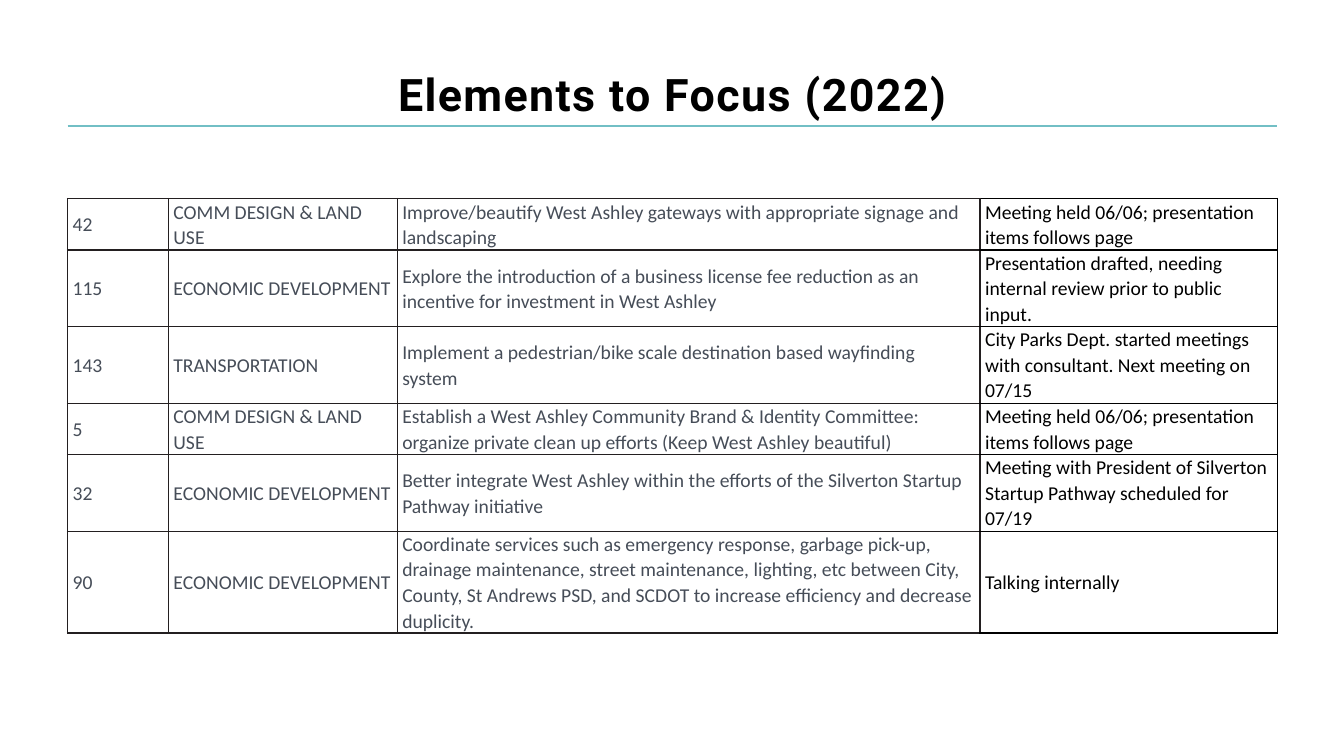
"""Build the slide that lists the elements to focus on in 2022."""
from typing import NamedTuple

from lxml.etree import SubElement
from pptx import Presentation
from pptx.dml.color import RGBColor
from pptx.enum.shapes import MSO_CONNECTOR
from pptx.enum.text import MSO_ANCHOR, PP_ALIGN
from pptx.oxml import parse_xml
from pptx.oxml.ns import nsdecls, qn
from pptx.util import Pt

PX = 9144
LEFT, WIDTH = 67, 1200
TOP, LINE, GAP = 197, 25, 1
COLS = (100, 227, 578, 295)
HUES = {"black": "000000", "ink": "231F20", "slate": "464D58", "teal": "72BFC5"}


class Task(NamedTuple):
    code: str
    field: str
    goal: str
    state: str
    lines: int


TASKS = (
    Task("42", "COMM DESIGN & LAND USE",
         "Improve/beautify West Ashley gateways with appropriate signage and landscaping",
         "Meeting held 06/06; presentation items follows page", 2),
    Task("115", "ECONOMIC DEVELOPMENT",
         "Explore the introduction of a business license fee reduction as an "
         "incentive for investment in West Ashley",
         "Presentation drafted, needing internal review prior to public input.", 3),
    Task("143", "TRANSPORTATION",
         "Implement a pedestrian/bike scale destination based wayfinding system",
         "City Parks Dept. started meetings with consultant. Next meeting on 07/15", 3),
    Task("5", "COMM DESIGN & LAND USE",
         "Establish a West Ashley Community Brand & Identity Committee: "
         "organize private clean up efforts (Keep West Ashley beautiful)",
         "Meeting held 06/06; presentation items follows page", 2),
    Task("32", "ECONOMIC DEVELOPMENT",
         "Better integrate West Ashley within the efforts of the Silverton "
         "Startup Pathway initiative",
         "Meeting with President of Silverton Startup Pathway scheduled for 07/19", 3),
    Task("90", "ECONOMIC DEVELOPMENT",
         "Coordinate services such as emergency response, garbage pick-up, drainage "
         "maintenance, street maintenance, lighting, etc between City, County, "
         "St Andrews PSD, and SCDOT to increase efficiency and decrease duplicity.",
         "Talking internally", 4),
)


def px(size: int) -> int:
    return size * PX


def tall(task: Task) -> int:
    return LINE * task.lines + GAP


def write(frame, text: str, *, font: str, size: int, hue: str, bold: bool = False,
          align=PP_ALIGN.LEFT, lead: float = 1.0, track: int = 0) -> None:
    frame.word_wrap = True
    para = frame.paragraphs[0]
    para.alignment, para.line_spacing = align, lead
    run = para.add_run()
    run.text = text
    run.font.name, run.font.size, run.font.bold = font, Pt(size), bold
    run.font.color.rgb = RGBColor.from_string(HUES[hue])
    if track:
        run.font._element.set("spc", str(track))


def edge(cell, hues: dict[str, str]) -> None:
    props = cell._tc.get_or_add_tcPr()
    for spot, side in enumerate("LRTB"):
        props.insert(spot, parse_xml(
            f'<a:ln{side} {nsdecls("a")} w="12700"><a:solidFill>'
            f'<a:srgbClr val="{HUES[hues[side]]}"/></a:solidFill></a:ln{side}>'))


def fill_cell(cell, text: str, last: bool) -> None:
    cell.fill.background()
    cell.vertical_anchor = MSO_ANCHOR.MIDDLE
    cell.margin_left = cell.margin_right = px(5)
    cell.margin_top = cell.margin_bottom = 0
    write(cell.text_frame, text, font="Calibri", size=14,
          hue="black" if last else "slate", lead=1.07)
    rest = "black" if last else "ink"
    edge(cell, {"L": "ink", "R": rest, "T": rest, "B": rest})


def add_rule(slide) -> None:
    rule = slide.shapes.add_connector(
        MSO_CONNECTOR.STRAIGHT, px(LEFT), px(125), px(LEFT + WIDTH), px(125))
    rule.line.color.rgb = RGBColor.from_string(HUES["teal"])
    rule.line.width = Pt(1)
    SubElement(rule._element.spPr, qn("a:effectLst"))


def add_title(slide) -> None:
    box = slide.shapes.add_textbox(px(LEFT), px(30), px(WIDTH), px(125))
    box.text_frame.vertical_anchor = MSO_ANCHOR.MIDDLE
    write(box.text_frame, "Elements to Focus (2022)", font="Roboto", size=32,
          hue="black", bold=True, align=PP_ALIGN.CENTER, track=100)


def add_grid(slide) -> None:
    high = sum(map(tall, TASKS))
    grid = slide.shapes.add_table(
        len(TASKS), len(COLS), px(LEFT), px(TOP), px(WIDTH), px(high)).table
    grid.first_row = grid.horz_banding = False
    for col, wide in zip(grid.columns, COLS):
        col.width = px(wide)
    for row, task in zip(grid.rows, TASKS):
        row.height = px(tall(task))
        for spot, cell in enumerate(row.cells):
            fill_cell(cell, task[spot], spot == len(COLS) - 1)


def main() -> None:
    deck = Presentation()
    deck.slide_width, deck.slide_height = px(1333), px(750)
    slide = deck.slides.add_slide(deck.slide_layouts[6])
    add_rule(slide)
    add_title(slide)
    add_grid(slide)
    deck.save("out.pptx")


if __name__ == "__main__":
    main()
